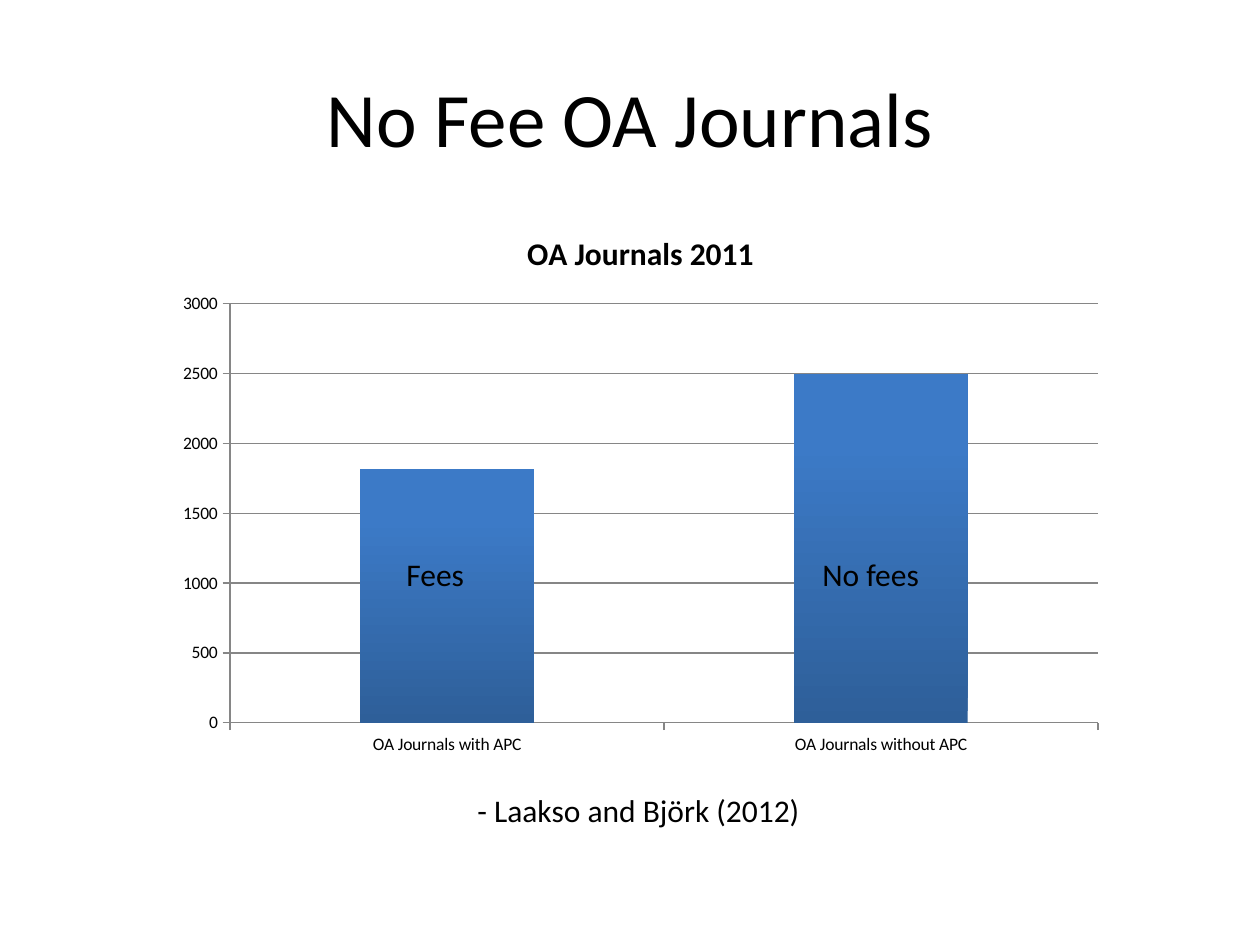
from pptx import Presentation
from pptx.chart.data import CategoryChartData
from pptx.dml.color import RGBColor
from pptx.enum.chart import XL_CHART_TYPE, XL_TICK_MARK
from pptx.enum.text import MSO_ANCHOR, MSO_AUTO_SIZE, PP_ALIGN
from pptx.util import Emu, Pt

# Content
TITLE = "No Fee OA Journals"
CHART_TITLE = "OA Journals 2011"
JOURNALS = [("OA Journals with APC", 1820), ("OA Journals without APC", 2500)]
TITLE_AREA = (63, 38, 1134, 157)
CHART_AREA = (164, 208, 953, 558)
NOTES = [  # text, area in px, wraps
    ("- Laakso and Björk (2012)", (465, 785, 392, 50), False),
    ("No fees", (810, 549, 152, 50), True),
    ("Fees", (394, 549, 105, 50), True),
]


class Theme:
    font = "Calibri"
    ink = RGBColor(0, 0, 0)
    line = RGBColor(0x86, 0x86, 0x86)
    bar_stops = [(0, RGBColor(0x2E, 0x5F, 0x99)), (0.8, RGBColor(0x3C, 0x7A, 0xC7))]
    title_size, note_size, axis_size = 44, 18, 10


def px(value):
    return Emu(round(value * 914400 / 126))


def format_font(font, size, bold=False):
    values = {"name": Theme.font, "size": Pt(size), "bold": bold}
    for name, value in values.items():
        setattr(font, name, value)
    font.color.rgb = Theme.ink


def format_line(line):
    line.color.rgb = Theme.line
    line.width = Pt(0.75)


def add_title(page):
    title = page.shapes.title
    for name, value in zip(("left", "top", "width", "height"), TITLE_AREA):
        setattr(title, name, px(value))
    frame = title.text_frame
    frame.text = TITLE
    frame.vertical_anchor = MSO_ANCHOR.MIDDLE
    para = frame.paragraphs[0]
    para.alignment = PP_ALIGN.CENTER
    format_font(para.runs[0].font, Theme.title_size)


def add_journal_chart(page):
    data = CategoryChartData()
    data.categories = [name for name, _ in JOURNALS]
    data.add_series("Series 1", [count for _, count in JOURNALS])
    chart = page.shapes.add_chart(
        XL_CHART_TYPE.COLUMN_CLUSTERED, *map(px, CHART_AREA), data).chart
    format_font(chart.font, Theme.axis_size)
    chart.has_legend = False
    chart.has_title = True
    heading = chart.chart_title.text_frame
    heading.text = CHART_TITLE
    format_font(heading.paragraphs[0].runs[0].font, Theme.note_size, bold=True)

    # Axes and gridlines
    for axis in (chart.category_axis, chart.value_axis):
        axis.major_tick_mark = XL_TICK_MARK.OUTSIDE
        axis.minor_tick_mark = XL_TICK_MARK.NONE
        format_line(axis.format.line)
    scale = {"minimum_scale": 0, "maximum_scale": 3000, "major_unit": 500,
             "has_major_gridlines": True}
    for name, value in scale.items():
        setattr(chart.value_axis, name, value)
    format_line(chart.value_axis.major_gridlines.format.line)

    # Columns shaded from dark at the foot to light at the top
    plot = chart.plots[0]
    plot.gap_width = 150
    plot.vary_by_categories = False
    fill = plot.series[0].format.fill
    fill.gradient()
    fill.gradient_angle = 90
    for stop, (position, color) in zip(fill.gradient_stops, Theme.bar_stops):
        stop.position = position
        stop.color.rgb = color


def add_note(page, text, area, wraps):
    frame = page.shapes.add_textbox(*map(px, area)).text_frame
    frame.word_wrap = wraps
    frame.auto_size = MSO_AUTO_SIZE.SHAPE_TO_FIT_TEXT
    frame.text = text
    format_font(frame.paragraphs[0].runs[0].font, Theme.note_size)


def main():
    deck = Presentation()
    deck.slide_width, deck.slide_height = px(1260), px(945)
    page = deck.slides.add_slide(deck.slide_layouts[5])
    add_title(page)
    add_journal_chart(page)
    for note in NOTES:
        add_note(page, *note)
    deck.save("out.pptx")


if __name__ == "__main__":
    main()
